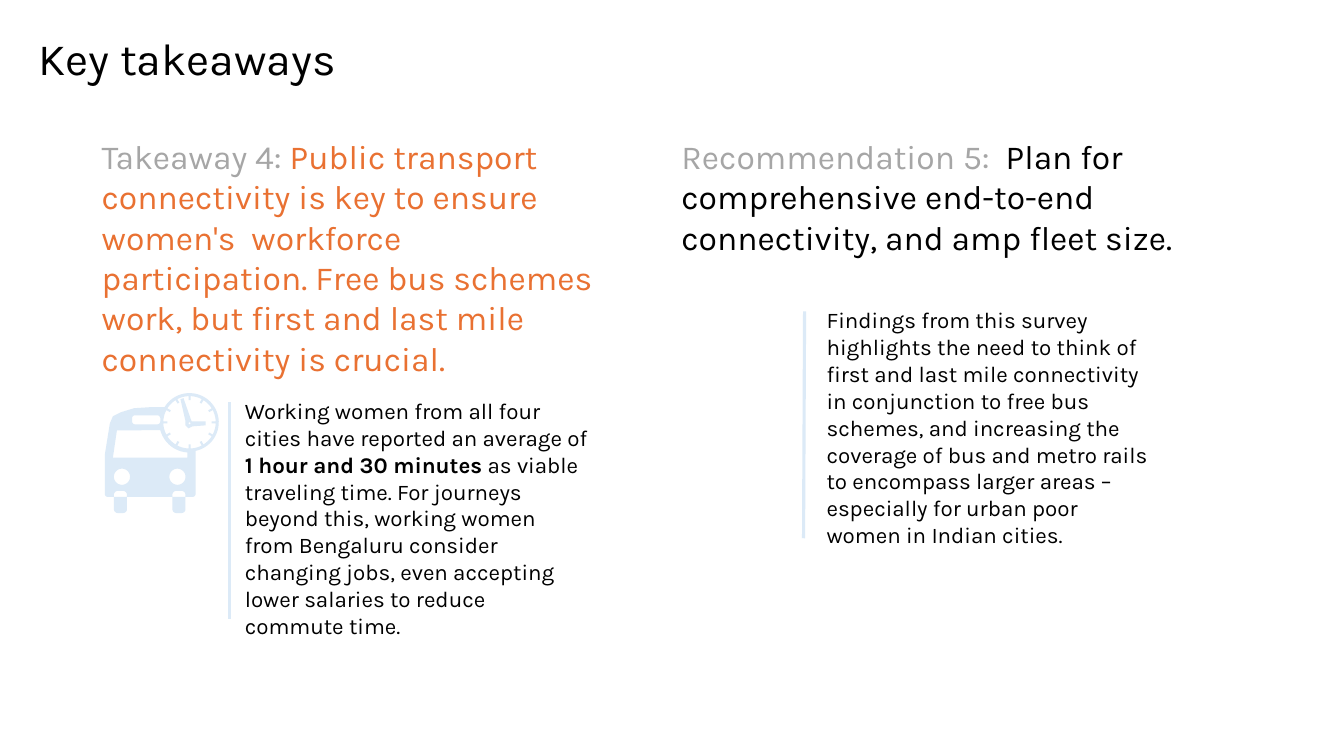
"""Build the key takeaways slide with its two text columns and bus icon."""
from dataclasses import dataclass
from math import cos, radians, sin

from lxml import etree
from pptx import Presentation
from pptx import util as u
from pptx.dml import color
from pptx.enum import shapes, text
from pptx.oxml import ns

HUES = {"ink": "000000", "grey": "A6A6A6", "orange": "E97132", "pale": "DCEAF7"}
FACE = "Karla"
HUB = (1.88, 4.19)
Dots = list[tuple[float, float]]


@dataclass
class Run:
    """A stretch of text in one format."""
    words: str
    hue: str = "ink"
    bold: bool = False


@dataclass
class Block:
    """A text box with its place, size and runs."""
    box: tuple[float, float, float, float]
    size: int
    runs: list[Run]


@dataclass
class Rule:
    """A straight line between two points."""
    start: tuple[float, float]
    end: tuple[float, float]


BLOCKS = [
    Block((0.91, 1.3, 5.21, 6.2), 24, [
        Run("Takeaway 4: ", "grey"),
        Run("Public transport connectivity is key to ensure women's  workforce "
            "participation. Free bus schemes work, but first and last mile "
            "connectivity is crucial.", "orange")]),
    Block((6.66, 1.3, 5.21, 1.95), 24, [
        Run("Recommendation 5: ", "grey"),
        Run(" Plan for comprehensive end-to-end connectivity, and amp fleet size.")]),
    Block((2.33, 3.89, 3.6, 2.26), 16, [
        Run("Working women from all four cities have reported an average of "),
        Run("1 hour and 30 minutes", bold=True),
        Run(" as viable traveling time. For journeys beyond this, working women "
            "from Bengaluru consider changing jobs, even accepting lower salaries "
            "to reduce commute time.")]),
    Block((8.1, 2.99, 3.46, 2.26), 16, [
        Run("Findings from this survey highlights the need to think of first and "
            "last mile connectivity in conjunction to free bus schemes, and "
            "increasing the coverage of bus and metro rails to encompass larger "
            "areas – especially for urban poor women in Indian cities.")]),
]
RULES = [Rule((2.28, 3.99), (2.28, 6.14)), Rule((7.98, 3.09), (7.97, 5.34))]


def tint(name: str) -> color.RGBColor:
    """Return a named colour."""
    return color.RGBColor.from_string(HUES[name])


def write(para, words: str, *, size: int, hue: str = "ink", bold: bool = False) -> None:
    """Add a formatted run to a paragraph."""
    run = para.add_run()
    run.text = words
    font = run.font
    font.name, font.size, font.bold = FACE, u.Pt(size), bold
    font.color.rgb = tint(hue)


def add_block(slide, block: Block) -> None:
    """Draw one text box."""
    frame = slide.shapes.add_textbox(*map(u.Inches, block.box)).text_frame
    frame.word_wrap = True
    for run in block.runs:
        write(frame.paragraphs[0], run.words, size=block.size, hue=run.hue, bold=run.bold)


def add_rule(slide, rule: Rule) -> None:
    """Draw one divider line."""
    ends = map(u.Inches, (*rule.start, *rule.end))
    line = slide.shapes.add_connector(shapes.MSO_CONNECTOR.STRAIGHT, *ends)
    line.line.color.rgb = tint("pale")
    line.line.width = u.Pt(2.25)
    etree.SubElement(line._element.spPr, ns.qn("a:effectLst"))


def arc(mid: tuple[float, float], rad: float, start: int = 0, stop: int = 360) -> Dots:
    """Return points along an arc, with angles in degrees clockwise from the right."""
    steps = max(6, abs(stop - start) // 6)
    turns = [radians(start + (stop - start) * i / steps) for i in range(steps + 1)]
    return [(mid[0] + rad * cos(t), mid[1] + rad * sin(t)) for t in turns]


def pill(left: float, top: float, wide: float, high: float, rad: float) -> Dots:
    """Return the outline of a rounded rectangle."""
    right, base = left + wide - rad, top + high - rad
    mids = [(right, base), (left + rad, base), (left + rad, top + rad), (right, top + rad)]
    return [dot for i, mid in enumerate(mids) for dot in arc(mid, rad, 90 * i, 90 * i + 90)]


def bar(turn: int, near: float, far: float, half: float) -> Dots:
    """Return a thin bar that points out from the clock hub."""
    c, s = cos(radians(turn)), sin(radians(turn))
    ends = [(near, -half), (far, -half), (far, half), (near, half)]
    return [(HUB[0] + r * c - w * s, HUB[1] + r * s + w * c) for r, w in ends]


def icon() -> list[Dots]:
    """Return the outlines of the bus and clock, where nested ones cut holes."""
    body = (arc(HUB, 0.29, 211, 438) + arc((1.91, 4.9), 0.03, 0, 90)
            + arc((1.07, 4.9), 0.03, 90, 180)
            + [(1.04, 4.51), (1.09, 4.2), (1.12, 4.13), (1.2, 4.09), (1.33, 4.05), (1.49, 4.04)])
    pane = arc(HUB, 0.3, 165, 94) + [(1.86, 4.54), (1.12, 4.54), (1.16, 4.27)]
    hands = [(1.84, 4.18), (1.79, 3.96), (1.82, 3.95), (1.9, 4.18), (2.04, 4.18),
             (2.04, 4.22), (1.91, 4.23), (1.87, 4.25), (1.84, 4.22)]
    lamps = [arc((x, 4.73), 0.08) for x in (1.21, 1.76)]
    wheels = [pill(x, 4.87, 0.13, 0.22, 0.04) for x in (1.13, 1.71)]
    ticks = [bar(turn, 0.22, 0.26, 0.01) for turn in range(0, 360, 30)]
    sign = pill(1.31, 4.12, 0.28, 0.09, 0.03)
    return [body, pane, sign, arc(HUB, 0.26), hands, arc((1.88, 4.2), 0.01),
            *lamps, *wheels, *ticks]


def add_icon(slide) -> None:
    """Draw the bus and clock as one shape."""
    loops = [[(u.Inches(x), u.Inches(y)) for x, y in loop] for loop in icon()]
    pen = slide.shapes.build_freeform(*loops[0][0])
    for i, loop in enumerate(loops):
        if i:
            pen.move_to(*loop[0])
        pen.add_line_segments(loop[1:], close=True)
    bus = pen.convert_to_shape()
    bus.shadow.inherit = False
    bus.fill.solid()
    bus.fill.fore_color.rgb = tint("pale")
    bus.line.fill.background()


def add_title(slide) -> None:
    """Place and fill the title."""
    title = slide.shapes.title
    title.left, title.top, title.width, title.height = map(u.Inches, (0.28, 0.18, 11.5, 0.84))
    frame = title.text_frame
    frame.vertical_anchor = text.MSO_ANCHOR.MIDDLE
    para = frame.paragraphs[0]
    para.alignment = text.PP_ALIGN.LEFT
    para.line_spacing = 0.9
    write(para, "Key takeaways", size=32)


def main() -> None:
    """Build and save the slide."""
    deck = Presentation()
    deck.slide_width, deck.slide_height = u.Inches(13.33), u.Inches(7.5)
    slide = deck.slides.add_slide(deck.slide_layouts[5])
    add_title(slide)
    for block in BLOCKS:
        add_block(slide, block)
    for rule in RULES:
        add_rule(slide, rule)
    add_icon(slide)
    deck.save("out.pptx")


if __name__ == "__main__":
    main()
